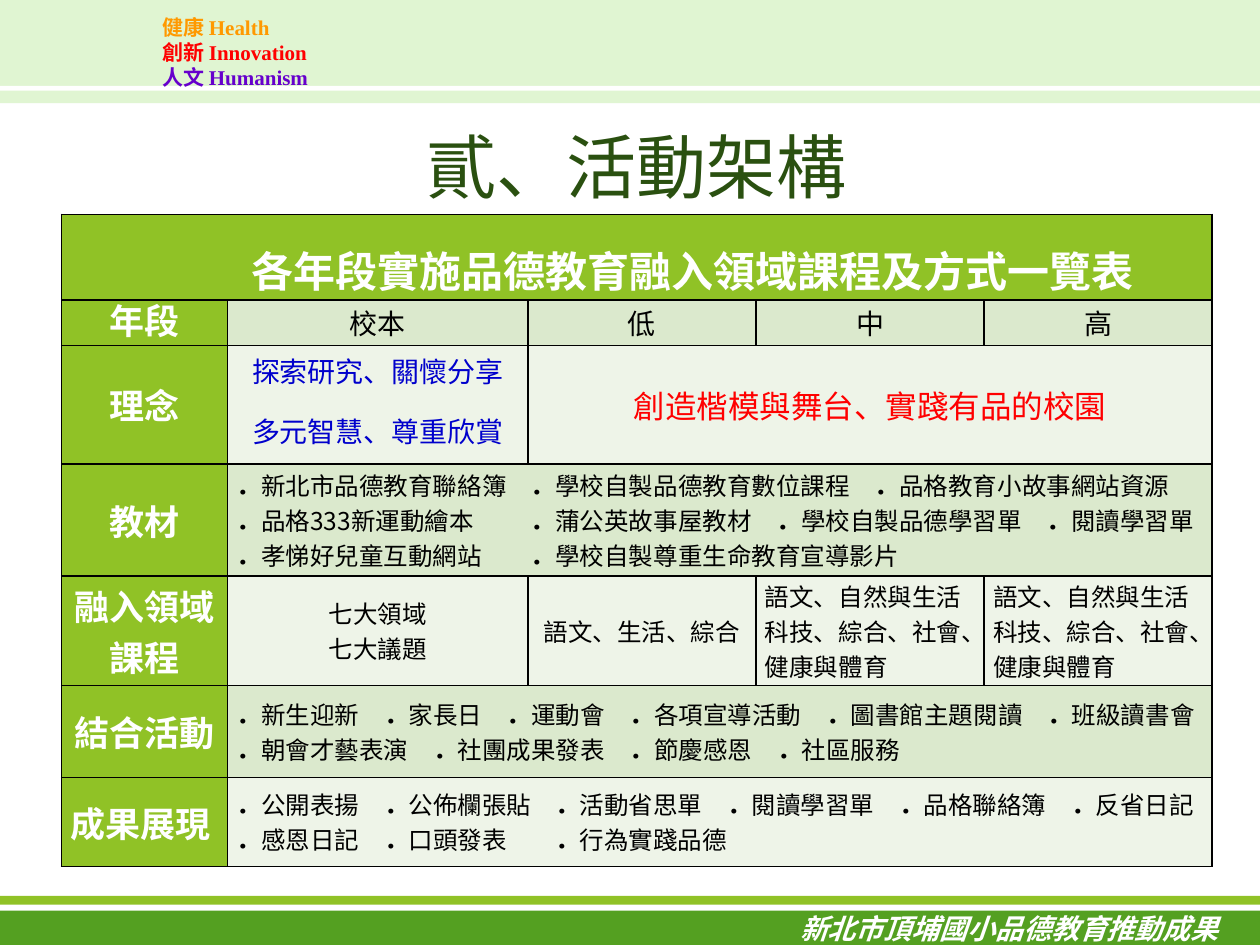
from dataclasses import dataclass

from lxml import etree
from pptx import Presentation
from pptx import util as u
from pptx.dml.color import RGBColor
from pptx.enum import shapes, text
from pptx.oxml.ns import qn


@dataclass(frozen=True)
class Theme:
    sans: str = "Noto Sans CJK SC"
    serif: str = "Times New Roman"
    white: str = "FFFFFF"
    black: str = "000000"
    blue: str = "0000CC"
    red: str = "FF0000"
    orange: str = "FF9900"
    purple: str = "6600CC"
    mint: str = "D4F2C0"
    lime: str = "90C226"
    green: str = "54A021"
    forest: str = "2A5010"
    row_dark: str = "DBE9CD"
    row_light: str = "EEF4E8"
    title: int = 40
    banner: int = 24
    label: int = 20
    goal: int = 18
    medium: int = 16
    body: int = 14
    motto: int = 12


LEFT, CENTER = text.PP_ALIGN.LEFT, text.PP_ALIGN.CENTER
TOP, MIDDLE = text.MSO_ANCHOR.TOP, text.MSO_ANCHOR.MIDDLE


def add_text(paragraph, content, *, font, size, color, bold=False, italic=False):
    run = paragraph.add_run()
    run.text = content
    run.font.name = font
    run.font.size = u.Pt(size)
    run.font.bold = bold
    run.font.italic = italic
    run.font.color.rgb = RGBColor.from_string(color)
    etree.SubElement(run.font._element, qn("a:ea"), typeface=font)


def add_tab_stop(paragraph, position):
    stops = etree.SubElement(paragraph._p.get_or_add_pPr(), qn("a:tabLst"))
    etree.SubElement(stops, qn("a:tab"), pos=str(u.Cm(position)), algn="l")


def outline_cell(cell, color):
    properties = cell._tc.get_or_add_tcPr()
    for position, side in enumerate(("lnL", "lnR", "lnT", "lnB")):
        line = etree.Element(qn(f"a:{side}"), w=str(u.Pt(1)))
        fill = etree.SubElement(line, qn("a:solidFill"))
        etree.SubElement(fill, qn("a:srgbClr"), val=color)
        properties.insert(position, line)


class SlideBuilder:
    def __init__(self, slide, theme):
        self.slide = slide
        self.theme = theme

    def band(self, top, height, color, opacity=100):
        """Draw a full-width bar; opacity is a percentage."""
        bar = self.slide.shapes.add_shape(
            shapes.MSO_SHAPE.RECTANGLE, 0, u.Cm(top), u.Cm(25.4), u.Cm(height))
        bar.shadow.inherit = False
        bar.line.fill.background()
        bar.fill.solid()
        bar.fill.fore_color.rgb = RGBColor.from_string(color)
        if opacity < 100:
            tint = bar.fill._xPr.find(".//" + qn("a:srgbClr"))
            etree.SubElement(tint, qn("a:alpha"), val=str(opacity * 1000))

    def text_box(self, left, top, width, height, anchor=TOP):
        box = self.slide.shapes.add_textbox(
            u.Cm(left), u.Cm(top), u.Cm(width), u.Cm(height))
        box.text_frame.word_wrap = True
        box.text_frame.vertical_anchor = anchor
        return box.text_frame

    def paragraphs(self, frame, lines, *, align=LEFT, spacing=None):
        """Yield each line with its own formatted paragraph."""
        for index, line in enumerate(lines):
            paragraph = frame.add_paragraph() if index else frame.paragraphs[0]
            paragraph.alignment = align
            if spacing:
                paragraph.line_spacing = spacing
            yield paragraph, line

    def table(self, left, top, columns, rows):
        grid = self.slide.shapes.add_table(
            len(rows), len(columns), u.Cm(left), u.Cm(top),
            u.Cm(sum(columns)), u.Cm(sum(rows))).table
        for column, width in zip(grid.columns, columns):
            column.width = u.Cm(width)
        for row, height in zip(grid.rows, rows):
            row.height = u.Cm(height)
        for index, cell in enumerate(grid.iter_cells()):
            row, column = divmod(index, len(columns))
            stripe = self.theme.row_dark if row % 2 else self.theme.row_light
            color = self.theme.lime if row == 0 or column == 0 else stripe
            cell.fill.solid()
            cell.fill.fore_color.rgb = RGBColor.from_string(color)
            cell.margin_left = cell.margin_right = u.Cm(0.18)
            cell.margin_top = cell.margin_bottom = 0
            cell.vertical_anchor = MIDDLE
            outline_cell(cell, self.theme.black)
        return grid

    def cell(self, cell, lines, *, size, color, bold=False, align=CENTER, spacing=None):
        for paragraph, line in self.paragraphs(
                cell.text_frame, lines, align=align, spacing=spacing):
            add_text(paragraph, line, font=self.theme.sans, size=size,
                     color=color, bold=bold)

    def dotted_cell(self, cell, lines, tab):
        """Fill a cell with inline items, each led by a bold dot."""
        style = dict(font=self.theme.sans, size=self.theme.body, color=self.theme.black)
        for paragraph, line in self.paragraphs(
                cell.text_frame, lines, spacing=u.Pt(20)):
            add_tab_stop(paragraph, tab)
            for item in line.split("．")[1:]:
                add_text(paragraph, "．", bold=True, **style)
                add_text(paragraph, item, **style)


def add_frame(page, theme):
    page.band(18.36, 0.69, theme.green)
    page.band(18.06, 0.18, theme.lime)
    footer = page.text_box(15.88, 18.29, 9.5, 0.79)
    for paragraph, line in page.paragraphs(
            footer, ["新北市頂埔國小品德教育推動成果"], spacing=u.Pt(18)):
        add_text(paragraph, line, font=theme.sans, size=theme.medium,
                 color=theme.white, bold=True, italic=True)

    page.band(0, 2.08, theme.mint, opacity=70)
    page.band(1.73, 0.1, theme.white)
    values = [("健康 ", "Health", theme.orange),
              ("創新 ", "Innovation", theme.red),
              ("人文 ", "Humanism", theme.purple)]
    motto = page.text_box(3.02, 0.15, 5.16, 1.8, anchor=MIDDLE)
    for paragraph, (chinese, english, color) in page.paragraphs(
            motto, values, spacing=u.Pt(14.4)):
        for word, font in ((chinese, theme.sans), (english, theme.serif)):
            add_text(paragraph, word, font=font, size=theme.motto, color=color, bold=True)


def add_curriculum(page, theme):
    grid = page.table(1.24, 4.32, [3.35, 6.05, 4.6, 4.6, 4.6],
                      [1.73, 0.91, 2.39, 2.26, 2.21, 1.85, 1.8])
    for row, first in ((0, 0), (2, 2), (3, 1), (5, 1), (6, 1)):
        grid.cell(row, first).merge(grid.cell(row, 4))

    banner = grid.cell(0, 0)
    banner.vertical_anchor = TOP
    page.cell(banner, ["各年段實施品德教育融入領域課程及方式一覽表"],
              size=theme.banner, color=theme.white, bold=True, spacing=u.Pt(49))
    banner.text_frame.paragraphs[0]._p.get_or_add_pPr().set("indent", str(u.Cm(2.24)))

    labels = [["年段"], ["理念"], ["教材"], ["融入領域", "課程"], ["結合活動"], ["成果展現"]]
    for row, label in enumerate(labels, start=1):
        page.cell(grid.cell(row, 0), label, size=theme.label, color=theme.white,
                  bold=True, align=LEFT if row == 6 else CENTER,
                  spacing=u.Pt(25) if row == 1 else None)

    for column, grade in enumerate(["校本", "低", "中", "高"], start=1):
        page.cell(grid.cell(1, column), [grade], size=theme.medium, color=theme.black)

    ideals = grid.cell(2, 1)
    page.cell(ideals, ["探索研究、關懷分享", "多元智慧、尊重欣賞"],
              size=theme.medium, color=theme.blue, spacing=1.5)
    ideals.text_frame.paragraphs[0].line_spacing = u.Pt(18)
    page.cell(grid.cell(2, 2), ["創造楷模與舞台、實踐有品的校園"],
              size=theme.goal, color=theme.red)

    upper_grades = ["語文、自然與生活科技、綜合、社會、健康與體育"]
    subjects = [(["七大領域", "七大議題"], CENTER), (["語文、生活、綜合"], CENTER),
                (upper_grades, LEFT), (upper_grades, LEFT)]
    for column, (lines, align) in enumerate(subjects, start=1):
        page.cell(grid.cell(4, column), lines, size=theme.body, color=theme.black,
                  align=align, spacing=u.Pt(20))

    page.dotted_cell(grid.cell(3, 1), [
        "．新北市品德教育聯絡簿\t．學校自製品德教育數位課程　．品格教育小故事網站資源",
        "．品格333新運動繪本\t．蒲公英故事屋教材　．學校自製品德學習單　．閱讀學習單",
        "．孝悌好兒童互動網站\t．學校自製尊重生命教育宣導影片"], tab=5.93)
    page.dotted_cell(grid.cell(5, 1), [
        "．新生迎新　．家長日　．運動會　．各項宣導活動　．圖書館主題閱讀　．班級讀書會",
        "．朝會才藝表演　．社團成果發表　．節慶感恩　．社區服務"], tab=6.42)
    page.dotted_cell(grid.cell(6, 1), [
        "．公開表揚　．公佈欄張貼\t．活動省思單　．閱讀學習單　．品格聯絡簿　．反省日記",
        "．感恩日記　．口頭發表\t．行為實踐品德"], tab=6.42)


def main():
    theme = Theme()
    deck = Presentation()
    deck.slide_width, deck.slide_height = u.Cm(25.4), u.Cm(19.05)
    page = SlideBuilder(deck.slides.add_slide(deck.slide_layouts[6]), theme)
    add_frame(page, theme)
    heading = page.text_box(5.94, 2.36, 13.79, 1.96, anchor=MIDDLE)
    for paragraph, line in page.paragraphs(heading, ["貳、活動架構"], align=CENTER):
        add_text(paragraph, line, font=theme.sans, size=theme.title, color=theme.forest)
    add_curriculum(page, theme)
    deck.save("out.pptx")


if __name__ == "__main__":
    main()
